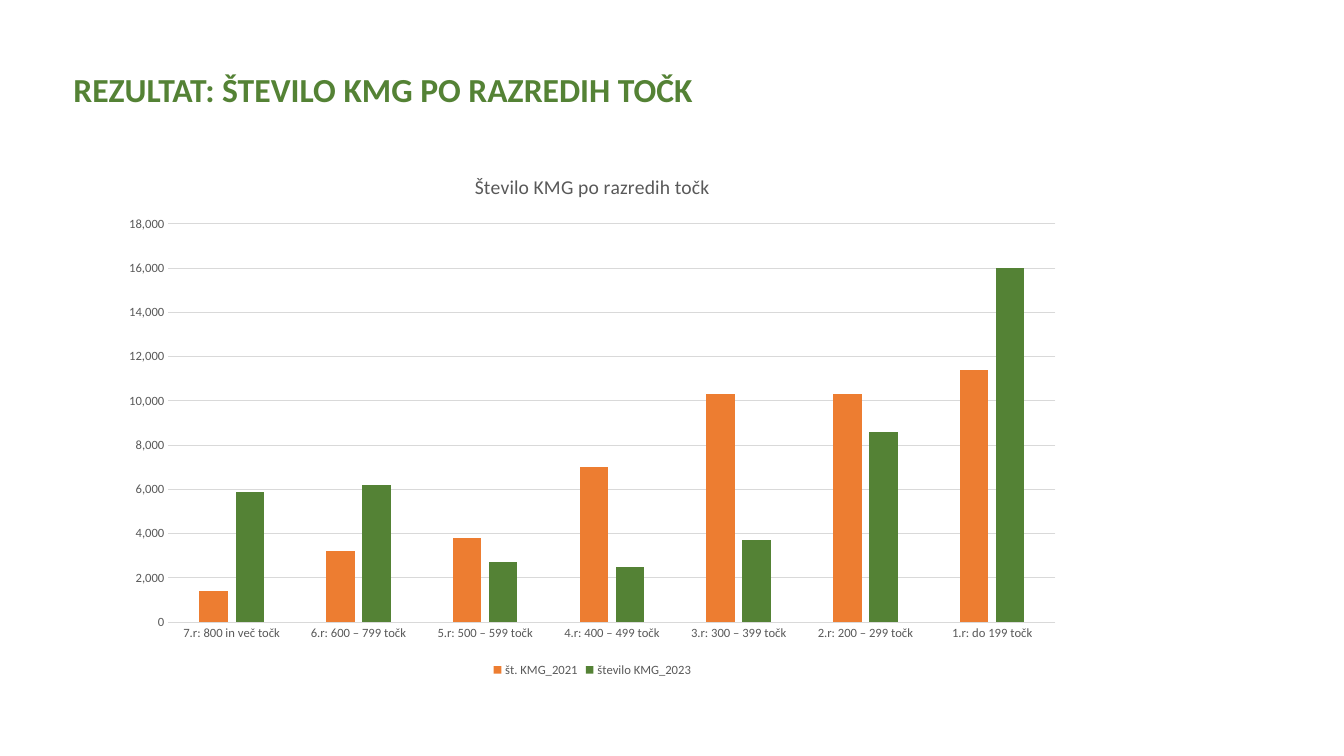
from dataclasses import dataclass

from pptx import Presentation
from pptx.chart import data as chart_data
from pptx.dml import color
from pptx.enum import chart as chart_enum
from pptx.enum import text
from pptx.util import Inches, Pt


@dataclass(frozen=True)
class Theme:
    font: str = "Calibri"
    green: str = "548235"
    orange: str = "ED7D31"
    gray: str = "595959"
    grid: str = "D9D9D9"
    heading_size: int = 24
    chart_title_size: int = 14
    label_size: int = 9
    line_width: float = 0.75


@dataclass(frozen=True)
class YearSeries:
    name: str
    values: tuple[int, ...]
    fill: str


THEME = Theme()
CATEGORIES = (
    "7.r: 800 in več točk",
    "6.r: 600 – 799 točk",
    "5.r: 500 – 599 točk",
    "4.r: 400 – 499 točk",
    "3.r: 300 – 399 točk",
    "2.r: 200 – 299 točk",
    "1.r: do 199 točk",
)
YEARS = (
    YearSeries("št. KMG_2021", (1400, 3200, 3800, 7000, 10300, 10300, 11400), THEME.orange),
    YearSeries("število KMG_2023", (5900, 6200, 2700, 2500, 3700, 8600, 16000), THEME.green),
)


def rgb(value: str) -> color.RGBColor:
    return color.RGBColor.from_string(value)


def style_font(font, size: int, fill: str, bold: bool = False) -> None:
    font.name = THEME.font
    font.size = Pt(size)
    font.bold = bold
    font.color.rgb = rgb(fill)


def style_line(line) -> None:
    line.color.rgb = rgb(THEME.grid)
    line.width = Pt(THEME.line_width)


def add_heading(slide) -> None:
    box = slide.shapes.add_textbox(Inches(0.63), Inches(0.63), Inches(6.4), Inches(0.5))
    frame = box.text_frame
    frame.word_wrap = False
    frame.auto_size = text.MSO_AUTO_SIZE.SHAPE_TO_FIT_TEXT
    paragraph = frame.paragraphs[0]
    paragraph.text = "REZULTAT: ŠTEVILO KMG PO RAZREDIH TOČK"
    style_font(paragraph.font, THEME.heading_size, THEME.green, bold=True)


def style_axes(chart) -> None:
    for axis in (chart.category_axis, chart.value_axis):
        axis.major_tick_mark = chart_enum.XL_TICK_MARK.NONE
        axis.minor_tick_mark = chart_enum.XL_TICK_MARK.NONE
        style_font(axis.tick_labels.font, THEME.label_size, THEME.gray)
    style_line(chart.category_axis.format.line)
    value_axis = chart.value_axis
    value_axis.format.line.fill.background()
    value_axis.has_major_gridlines = True
    style_line(value_axis.major_gridlines.format.line)
    value_axis.minimum_scale = 0
    value_axis.maximum_scale = 18000
    value_axis.major_unit = 2000
    value_axis.tick_labels.number_format = "#,##0"
    value_axis.tick_labels.number_format_is_linked = False


def add_class_chart(slide) -> None:
    data = chart_data.CategoryChartData(number_format="#,##0")
    data.categories = CATEGORIES
    for year in YEARS:
        data.add_series(year.name, year.values)
    chart = slide.shapes.add_chart(
        chart_enum.XL_CHART_TYPE.COLUMN_CLUSTERED,
        Inches(1.09), Inches(1.53), Inches(9.57), Inches(5.23), data,
    ).chart
    style_font(chart.font, THEME.label_size, THEME.gray)

    chart.has_title = True
    title = chart.chart_title
    title.include_in_layout = False
    paragraph = title.text_frame.paragraphs[0]
    paragraph.text = "Število KMG po razredih točk"
    style_font(paragraph.font, THEME.chart_title_size, THEME.gray)

    chart.has_legend = True
    chart.legend.position = chart_enum.XL_LEGEND_POSITION.BOTTOM
    chart.legend.include_in_layout = False
    style_font(chart.legend.font, THEME.label_size, THEME.gray)
    style_axes(chart)

    plot = chart.plots[0]
    plot.gap_width = 219
    plot.overlap = -27
    plot.vary_by_categories = False
    for series, year in zip(plot.series, YEARS):
        series.format.fill.solid()
        series.format.fill.fore_color.rgb = rgb(year.fill)
        series.invert_if_negative = False


def main() -> None:
    presentation = Presentation()
    presentation.slide_width = Inches(13.33)
    presentation.slide_height = Inches(7.5)
    slide = presentation.slides.add_slide(presentation.slide_layouts[6])
    add_class_chart(slide)
    add_heading(slide)
    presentation.save("out.pptx")


if __name__ == "__main__":
    main()
